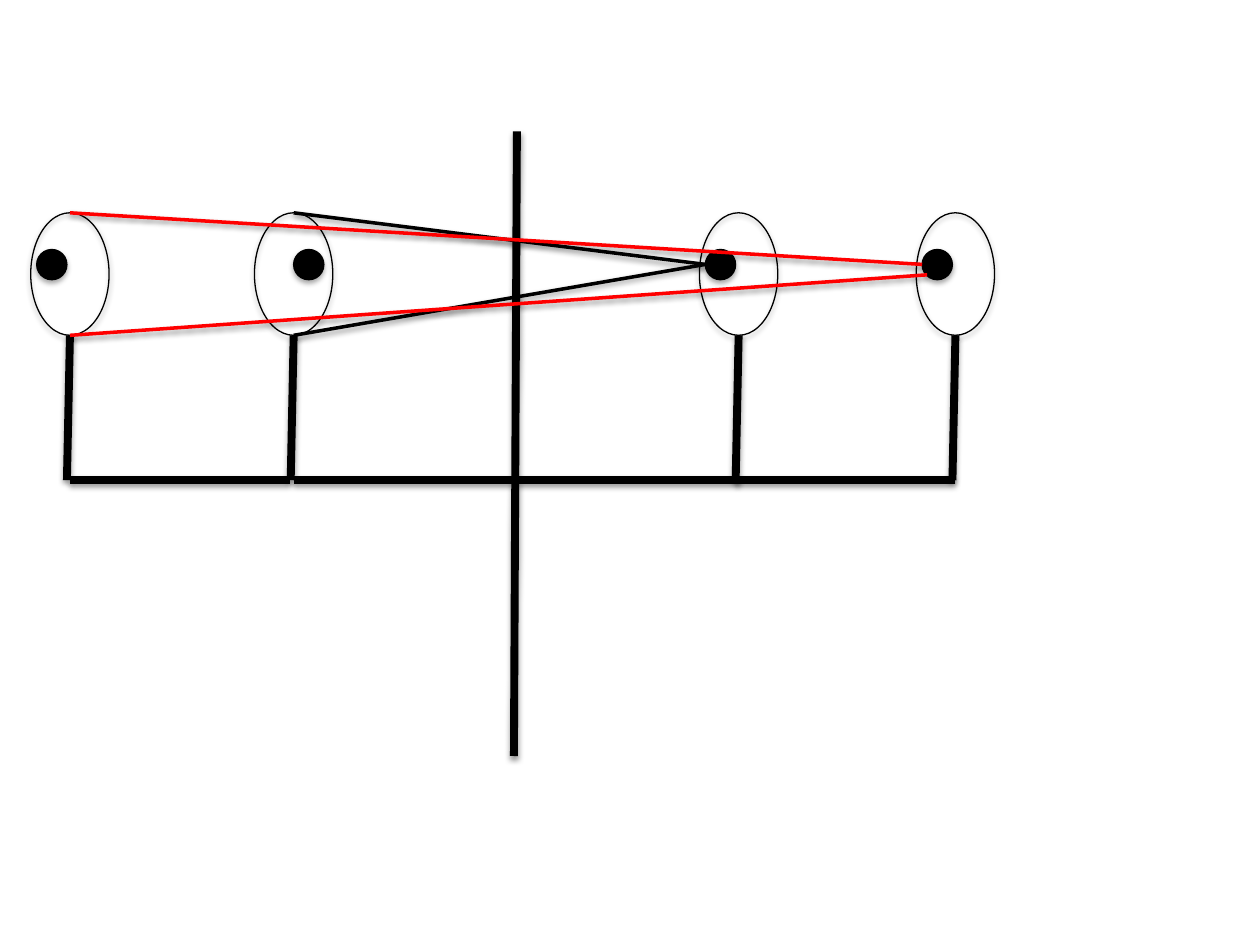
from dataclasses import dataclass

from lxml import etree
from pptx import Presentation
from pptx.dml.color import RGBColor
from pptx.enum import shapes as kinds
from pptx.oxml.ns import qn
from pptx.util import Cm, Pt


@dataclass(frozen=True)
class Theme:
    ink: str = "000000"
    far_sight: str = "FF0000"
    outline: float = 0.75
    sight: float = 2
    frame: float = 4.5
    blur: float = 3.1
    line_shadow: tuple[int, float] = (38, 1.6)
    shape_shadow: tuple[int, float] = (35, 1.8)


@dataclass(frozen=True)
class Eye:
    center: float
    pupil_offset: float = -0.67


@dataclass(frozen=True)
class Segment:
    start: tuple[float, float]
    end: tuple[float, float]
    width: float
    color: str


THEME = Theme()
EYE_WIDTH, EYE_TOP, EYE_BOTTOM = 1.58, 4.29, 6.76
PUPIL_SIZE, PUPIL_TOP = 0.61, 5.03
PUPIL_MIDDLE = 5.33
BASE = 9.68
FOOT_SHIFT = -0.06

FAR_LEFT, NEAR_LEFT = Eye(1.41), Eye(5.92, 0)
NEAR_RIGHT, FAR_RIGHT = Eye(14.89), Eye(19.26)
EYES = (NEAR_LEFT, NEAR_RIGHT, FAR_RIGHT, FAR_LEFT)


def cast_shadow(item, strength: tuple[int, float]) -> None:
    opacity, distance = strength
    effects = etree.SubElement(item._element.spPr, qn("a:effectLst"))
    shadow = etree.SubElement(
        effects, qn("a:outerShdw"), blurRad=str(Pt(THEME.blur)),
        dist=str(Pt(distance)), dir="5400000", rotWithShape="0")
    color = etree.SubElement(shadow, qn("a:srgbClr"), val=THEME.ink)
    etree.SubElement(color, qn("a:alpha"), val=str(opacity * 1000))


def draw_segment(canvas, segment: Segment) -> None:
    ends = [Cm(value) for value in (*segment.start, *segment.end)]
    line = canvas.add_connector(kinds.MSO_CONNECTOR.STRAIGHT, *ends)
    line.line.color.rgb = RGBColor.from_string(segment.color)
    line.line.width = Pt(segment.width)
    cast_shadow(line, THEME.line_shadow)


def draw_oval(canvas, left: float, top: float, width: float, height: float,
              filled: bool) -> None:
    oval = canvas.add_shape(kinds.MSO_SHAPE.OVAL, Cm(left), Cm(top),
                            Cm(width), Cm(height))
    if filled:
        oval.fill.solid()
        oval.fill.fore_color.rgb = RGBColor.from_string(THEME.ink)
    else:
        oval.fill.background()
    oval.line.color.rgb = RGBColor.from_string(THEME.ink)
    oval.line.width = Pt(THEME.outline)
    cast_shadow(oval, THEME.shape_shadow)


def draw_eye(canvas, eye: Eye) -> None:
    group = canvas.add_group_shape().shapes
    draw_oval(group, eye.center - EYE_WIDTH / 2, EYE_TOP, EYE_WIDTH,
              EYE_BOTTOM - EYE_TOP, filled=False)
    draw_segment(group, Segment((eye.center, EYE_BOTTOM),
                                (eye.center + FOOT_SHIFT, BASE),
                                THEME.frame, THEME.ink))
    draw_oval(group, eye.center + eye.pupil_offset, PUPIL_TOP, PUPIL_SIZE,
              PUPIL_SIZE, filled=True)


def sight_lines(viewed: Eye, upper: tuple[float, float],
                lower: tuple[float, float], color: str) -> list[Segment]:
    return [Segment((viewed.center, EYE_TOP), upper, THEME.sight, color),
            Segment((viewed.center, EYE_BOTTOM), lower, THEME.sight, color)]


def main() -> None:
    deck = Presentation()
    deck.slide_width, deck.slide_height = Cm(25.4), Cm(19.05)
    canvas = deck.slides.add_slide(deck.slide_layouts[6]).shapes

    draw_segment(canvas, Segment((10.42, 2.65), (10.36, 15.24),
                                 THEME.frame, THEME.ink))
    for right, left in ((14.89, 10.43), (10.37, 5.92),
                        (5.85, 1.41), (19.26, 14.83)):
        draw_segment(canvas, Segment((right, BASE), (left, BASE),
                                     THEME.frame, THEME.ink))
    for eye in EYES:
        draw_eye(canvas, eye)

    near_point = (NEAR_RIGHT.center + NEAR_RIGHT.pupil_offset, PUPIL_MIDDLE)
    far_point = (FAR_RIGHT.center + FAR_RIGHT.pupil_offset, PUPIL_MIDDLE)
    far_lower = (18.69, 5.54)
    for segment in (
            sight_lines(NEAR_LEFT, near_point, near_point, THEME.ink)
            + sight_lines(FAR_LEFT, far_point, far_lower, THEME.far_sight)):
        draw_segment(canvas, segment)

    deck.save("out.pptx")


if __name__ == "__main__":
    main()
